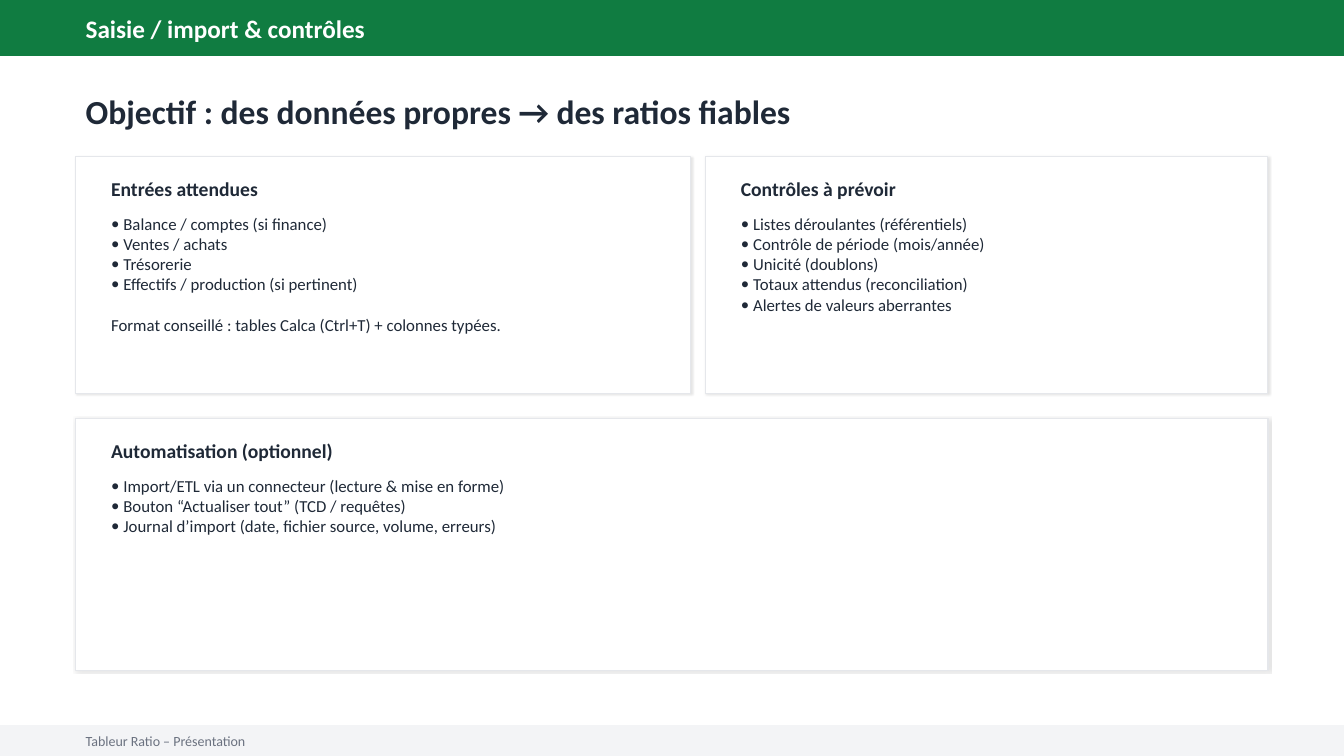
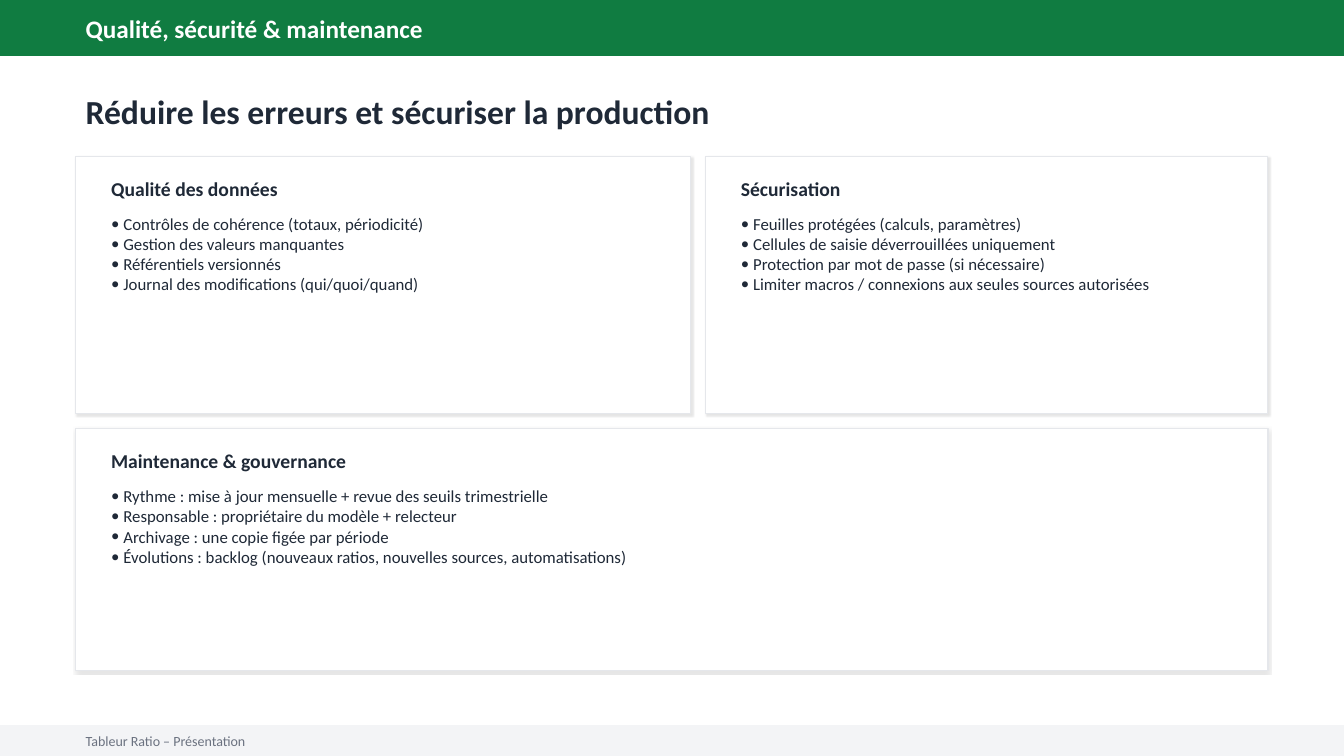
from lxml import etree
from pptx import Presentation
from pptx.dml.color import RGBColor
from pptx.enum.shapes import MSO_SHAPE
from pptx.enum.text import MSO_ANCHOR
from pptx.oxml.ns import qn
from pptx.util import Cm, Pt

RECT = MSO_SHAPE.RECTANGLE
MID = MSO_ANCHOR.MIDDLE
TOP = MSO_ANCHOR.TOP
FONT = "Calibri"
GREEN = "107C41"
WHITE = "FFFFFF"
PALE = "F3F4F6"
EDGE = "E5E7EB"
INK = "1F2937"
GREY = "6B7280"
WIDE, HIGH = 33.87, 19.05
LEFT, PAD = 1.91, 0.64
ROW = 3.94
FOOT = "Tableur Ratio – Présentation"


def add_box(slide, x, y, w, h, fill, edge):
    box = slide.shapes.add_shape(RECT, Cm(x), Cm(y), Cm(w), Cm(h))
    box.fill.solid()
    box.fill.fore_color.rgb = RGBColor.from_string(fill)
    box.line.color.rgb = RGBColor.from_string(edge)
    box.line.width = Pt(1)
    box.shadow.inherit = False
    return box


def add_text(slide, x, y, w, h, lines, size, color, bold=False, anchor=MID):
    frame = slide.shapes.add_textbox(Cm(x), Cm(y), Cm(w), Cm(h)).text_frame
    frame.word_wrap = True
    frame.vertical_anchor = anchor
    for i, line in enumerate(lines):
        para = frame.add_paragraph() if i else frame.paragraphs[0]
        run = para.add_run()
        run.text = line
        run.font.name = FONT
        run.font.size = Pt(size)
        run.font.bold = bold
        run.font.color.rgb = RGBColor.from_string(color)
    return frame.paragraphs


pages = [
    ("Saisie / import & contrôles",
     "Objectif : des données propres → des ratios fiables",
     5.97, 10.54, 6.35,
     [("Entrées attendues",
       ["Balance / comptes (si finance)",
        "Ventes / achats",
        "Trésorerie",
        "Effectifs / production (si pertinent)"],
       ["Format conseillé : tables Calca (Ctrl+T) + colonnes typées."]),
      ("Contrôles à prévoir",
       ["Listes déroulantes (référentiels)",
        "Contrôle de période (mois/année)",
        "Unicité (doublons)",
        "Totaux attendus (reconciliation)",
        "Alertes de valeurs aberrantes"], []),
      ("Automatisation (optionnel)",
       ["Import/ETL via un connecteur (lecture & mise en forme)",
        "Bouton “Actualiser tout” (TCD / requêtes)",
        "Journal d’import (date, fichier source, volume, erreurs)"], [])]),
    ("Qualité, sécurité & maintenance",
     "Réduire les erreurs et sécuriser la production",
     6.48, 10.8, 6.1,
     [("Qualité des données",
       ["Contrôles de cohérence (totaux, périodicité)",
        "Gestion des valeurs manquantes",
        "Référentiels versionnés",
        "Journal des modifications (qui/quoi/quand)"], []),
      ("Sécurisation",
       ["Feuilles protégées (calculs, paramètres)",
        "Cellules de saisie déverrouillées uniquement",
        "Protection par mot de passe (si nécessaire)",
        "Limiter macros / connexions aux seules sources autorisées"], []),
      ("Maintenance & gouvernance",
       ["Rythme : mise à jour mensuelle + revue des seuils trimestrielle",
        "Responsable : propriétaire du modèle + relecteur",
        "Archivage : une copie figée par période",
        "Évolutions : backlog (nouveaux ratios, nouvelles sources, automatisations)"],
       [])]),
]

deck = Presentation()
deck.slide_width = Cm(WIDE)
deck.slide_height = Cm(HIGH)

for band, title, tall, low, deep, cards in pages:
    slide = deck.slides.add_slide(deck.slide_layouts[6])
    add_box(slide, 0, 0, WIDE, 1.4, GREEN, GREEN)
    add_text(slide, LEFT, 0.36, 30.48, 0.71, [band], 18, WHITE, True)
    add_box(slide, 0, 18.29, WIDE, 0.76, PALE, PALE)
    add_text(slide, LEFT, 18.39, 30.48, 0.56, [FOOT], 10, GREY)
    add_text(slide, LEFT, 2.29, 30.99, 1.02, [title], 24, INK, True)

    spots = [(LEFT, ROW, 15.49, tall), (17.78, ROW, 14.17, tall),
             (LEFT, low, 30.05, deep)]
    for (x, y, w, h), (head, items, notes) in zip(spots, cards):
        card = add_box(slide, x, y, w, h, WHITE, EDGE)
        glow = card._element.spPr.find(qn("a:effectLst"))
        shade = etree.SubElement(glow, qn("a:outerShdw"), blurRad=str(Pt(1.5)),
                                 dist=str(Pt(1)), dir="2700000", algn="bl",
                                 rotWithShape="0")
        tint = etree.SubElement(shade, qn("a:srgbClr"), val="000000")
        etree.SubElement(tint, qn("a:alpha"), val="10000")

        inner = w - 2 * PAD
        add_text(slide, x + PAD, y + 0.46, inner, 0.71, [head], 14, INK, True)
        paras = add_text(slide, x + PAD, y + 1.32, inner, h - 1.91,
                         items + notes, 12, INK, anchor=TOP)
        for para in paras[:len(items)]:
            props = para._p.get_or_add_pPr()
            props.set("marL", str(Cm(0.31)))
            props.set("indent", str(-Cm(0.31)))
            etree.SubElement(props, qn("a:buFont"), typeface=FONT)
            etree.SubElement(props, qn("a:buChar"), char="•")
        for para in paras[len(items):]:
            para.space_before = Pt(14.6)

deck.save("out.pptx")
